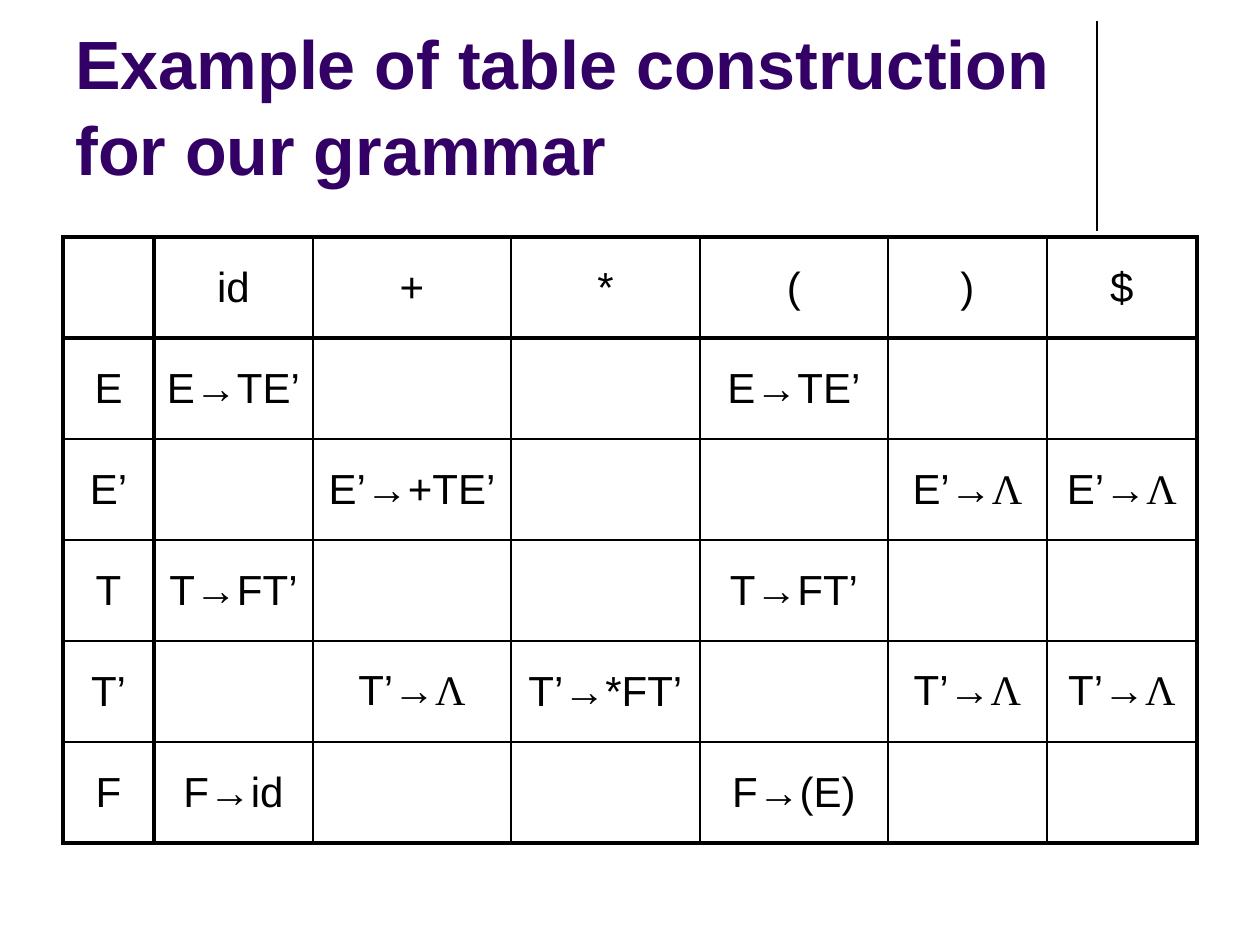
from dataclasses import dataclass
from itertools import groupby

from lxml.etree import SubElement
from pptx import Presentation
from pptx.dml.color import RGBColor
from pptx.enum.shapes import MSO_CONNECTOR
from pptx.enum.text import MSO_ANCHOR, PP_ALIGN
from pptx.oxml.ns import qn
from pptx.util import Emu, Pt

BLACK = RGBColor(0x00, 0x00, 0x00)
PURPLE = RGBColor(0x33, 0x00, 0x66)
THICK, THIN = Pt(2.25), Pt(1)
HEADERS = ["id", "+", "*", "(", ")", "$"]
COL_WIDTHS = [91, 159, 198, 189, 188, 159, 150]
ROW_HEIGHT = 101


@dataclass
class Production:
    head: str
    bodies: dict[str, str]


PRODUCTIONS = [
    Production("E", {"id": "TE’", "(": "TE’"}),
    Production("E’", {"+": "+TE’", ")": "Λ", "$": "Λ"}),
    Production("T", {"id": "FT’", "(": "FT’"}),
    Production("T’", {"+": "Λ", "*": "*FT’", ")": "Λ", "$": "Λ"}),
    Production("F", {"id": "id", "(": "(E)"}),
]


def px(n: int) -> Emu:
    return Emu(round(n * 914400 / 126))


def parse_rows() -> list[list[str]]:
    rows = [["", *HEADERS]]
    for prod in PRODUCTIONS:
        entries = [f"{prod.head}→{prod.bodies[h]}" if h in prod.bodies else "" for h in HEADERS]
        rows.append([prod.head, *entries])
    return rows


def add_title(slide, text: str) -> None:
    tf = slide.shapes.add_textbox(px(63), px(16), px(1040), px(179)).text_frame
    tf.word_wrap = True
    tf.vertical_anchor = MSO_ANCHOR.BOTTOM
    p = tf.paragraphs[0]
    p.text = text
    p.line_spacing = 1.05
    p.font.name, p.font.size, p.font.bold = "Arial", Pt(39), True
    p.font.color.rgb = PURPLE


def add_rule(slide, x: int, top: int, bottom: int) -> None:
    line = slide.shapes.add_connector(MSO_CONNECTOR.STRAIGHT, px(x), px(top), px(x), px(bottom))
    line.line.color.rgb = BLACK
    line.line.width = Pt(0.75)
    SubElement(line._element.spPr, qn("a:effectLst"))


def set_borders(cell, row: int, col: int, n_rows: int, n_cols: int) -> None:
    tc_pr = cell._tc.get_or_add_tcPr()
    edges = {
        "a:lnL": col in (0, 1),
        "a:lnR": col in (0, n_cols - 1),
        "a:lnT": row in (0, 1),
        "a:lnB": row in (0, n_rows - 1),
    }
    for tag, thick in edges.items():
        ln = SubElement(tc_pr, qn(tag), w=str(THICK if thick else THIN))
        fill = SubElement(ln, qn("a:solidFill"))
        SubElement(fill, qn("a:srgbClr"), val=str(BLACK))


def fill_cell(cell, text: str) -> None:
    cell.vertical_anchor = MSO_ANCHOR.MIDDLE
    p = cell.text_frame.paragraphs[0]
    p.alignment = PP_ALIGN.CENTER
    p.font.size = Pt(24)
    p.font.color.rgb = BLACK
    for is_lambda, chars in groupby(text, lambda ch: ch == "Λ"):
        r = p.add_run()
        r.text = "".join(chars)
        r.font.name = "Times New Roman" if is_lambda else "Arial"


def add_parse_table(slide, rows: list[list[str]]) -> None:
    n_rows, n_cols = len(rows), len(rows[0])
    table = slide.shapes.add_table(
        n_rows, n_cols, px(63), px(237), px(sum(COL_WIDTHS)), px(n_rows * ROW_HEIGHT)
    ).table
    table.first_row = table.horz_banding = False
    for column, width in zip(table.columns, COL_WIDTHS):
        column.width = px(width)
    for i, texts in enumerate(rows):
        table.rows[i].height = px(ROW_HEIGHT)
        for j, text in enumerate(texts):
            cell = table.cell(i, j)
            set_borders(cell, i, j, n_rows, n_cols)
            cell.fill.background()
            fill_cell(cell, text)


def main() -> None:
    prs = Presentation()
    prs.slide_width, prs.slide_height = px(1260), px(945)
    slide = prs.slides.add_slide(prs.slide_layouts[6])
    add_rule(slide, 1097, 21, 231)
    add_title(slide, "Example of table construction for our grammar")
    add_parse_table(slide, parse_rows())
    prs.save("out.pptx")


if __name__ == "__main__":
    main()
